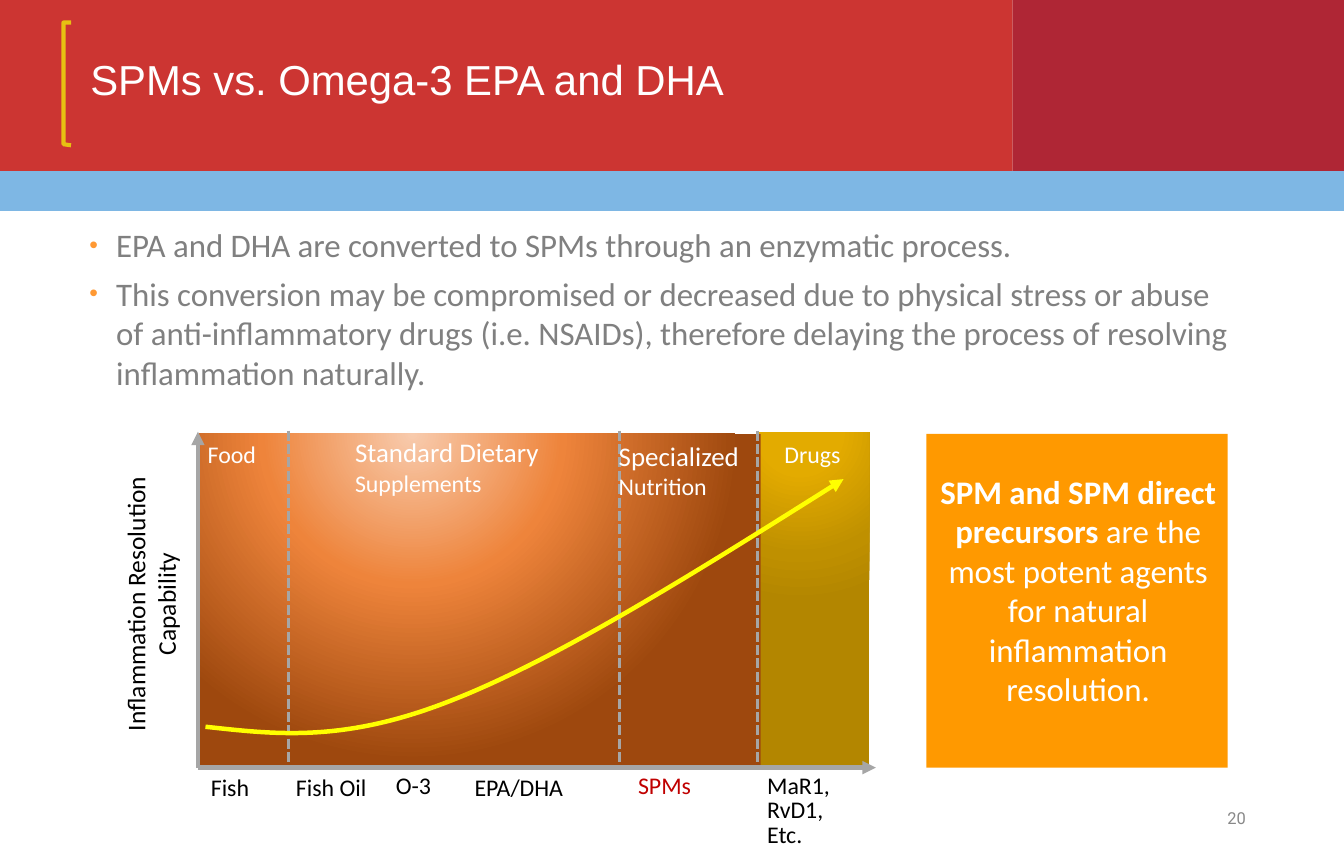
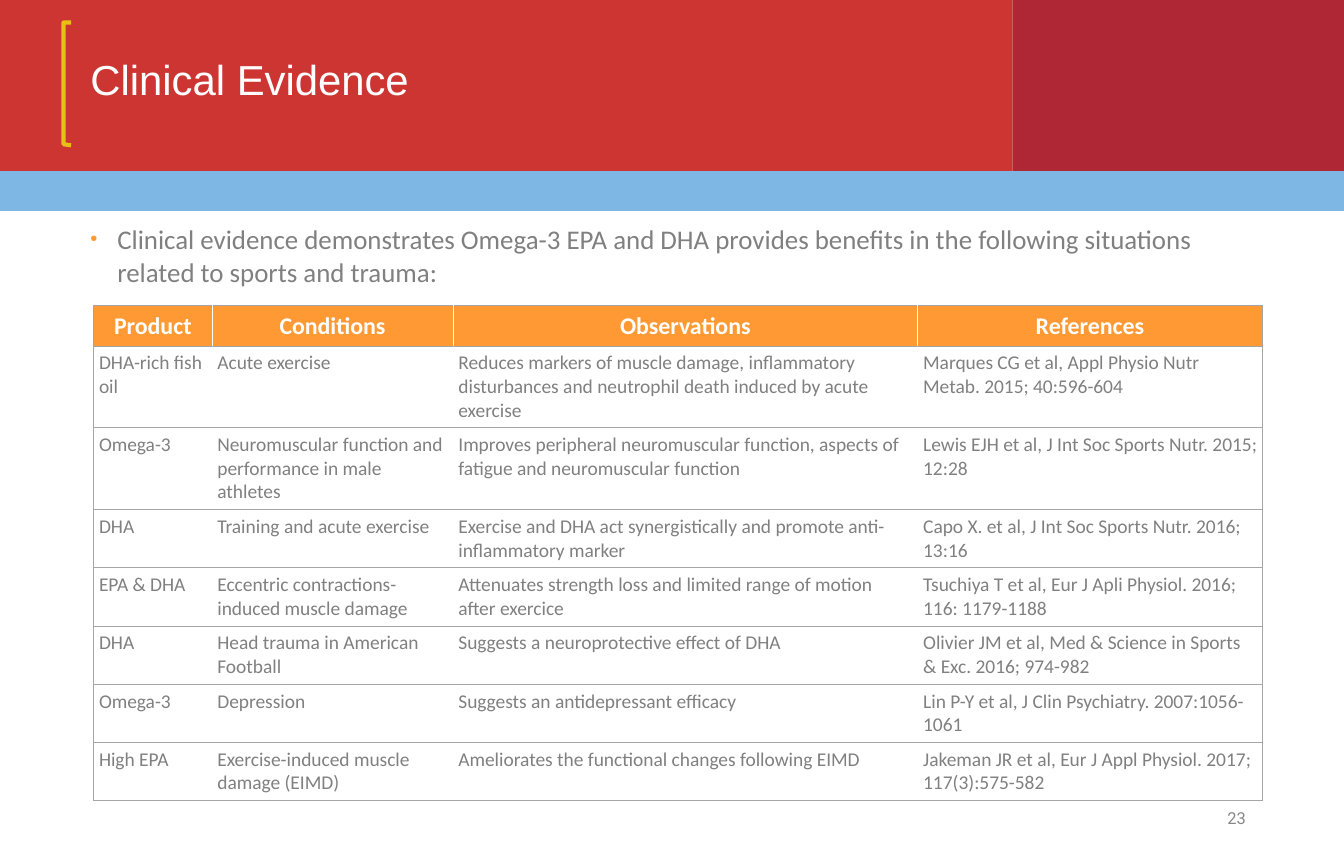
"""Builds two slides on SPMs, omega-3 and the clinical evidence."""
from lxml import etree
from pptx import Presentation
from pptx import util as u
from pptx.dml.color import RGBColor
from pptx.enum import dml, shapes, text as t
from pptx.oxml.ns import qn

SCALE = 9144
INSET = 5
RED, CRIMSON, SKY, GOLD = "CC3532", "AF2635", "7EB7E4", "E7C112"
ORANGE, AMBER, BODY, AXIS = "FF9933", "FF9900", "808080", "A6A6A6"
WHITE, BLACK, YELLOW, BORDER = "FFFFFF", "000000", "FFFF00", "A5A5A5"
CENTER, RIGHT, MIDDLE = t.PP_ALIGN.CENTER, t.PP_ALIGN.RIGHT, t.MSO_ANCHOR.MIDDLE


def px(*lengths):
    return [u.Emu(length * SCALE) for length in lengths]


def rgb(value):
    return RGBColor.from_string(value)


def child(parent, tag, **attributes):
    node = etree.SubElement(parent, qn("a:" + tag))
    for key, value in attributes.items():
        node.set(key, str(value))
    return node


def inset(holder, anchor=t.MSO_ANCHOR.TOP):
    holder.margin_left = holder.margin_right = px(INSET)[0]
    holder.margin_top = holder.margin_bottom = px(INSET)[0]
    holder.vertical_anchor = anchor


def write(frame, text, size=16, color=BLACK, font="Calibri", bold=False,
          align=t.PP_ALIGN.LEFT, before=0, spacing=1.0, bullet=False, lead=None):
    frame.clear()
    for index, words in enumerate(text.split("\n")):
        paragraph = frame.add_paragraph() if index else frame.paragraphs[0]
        paragraph.alignment = align
        paragraph.space_before = u.Pt(before)
        paragraph.line_spacing = spacing
        if bullet:
            properties = paragraph._p.get_or_add_pPr()
            properties.set("marL", str(25 * SCALE))
            properties.set("indent", str(-25 * SCALE))
            child(child(properties, "buClr"), "srgbClr", val=ORANGE)
            child(properties, "buSzPct", val=75000)
            child(properties, "buFont", typeface="Arial")
            child(properties, "buChar", char="•")
        runs = [(words, size, bold)]
        if lead:
            runs.insert(0, lead)
        for content, points, weight in runs:
            run = paragraph.add_run()
            run.text = content
            run.font.name = font
            run.font.size = u.Pt(points)
            run.font.bold = weight
            run.font.color.rgb = rgb(color)


def stroke(shape, color, width, dash=None, arrow=False):
    shape.line.color.rgb = rgb(color)
    shape.line.width = u.Pt(width)
    if dash:
        shape.line.dash_style = dash
    if arrow:
        child(shape._element.spPr.find(qn("a:ln")), "tailEnd", type="triangle")


def border(cell, side, color):
    line = child(cell._tc.get_or_add_tcPr(), "ln" + side, w=6350)
    if color:
        child(child(line, "solidFill"), "srgbClr", val=color)
    else:
        child(line, "noFill")


class Deck:
    """Holds the presentation, its style and the current slide."""

    def __init__(self, width, height):
        self.show = Presentation()
        self.show.slide_width, self.show.slide_height = px(width, height)

    def start(self, title, number):
        self.slide = self.show.slides.add_slide(self.show.slide_layouts[1])
        self.rect(0, -3, 941, 163, RED)
        self.rect(941, -3, 308, 163, CRIMSON)
        self.rect(0, 159, 1249, 37, SKY)
        self.outline([(66, 135), (59, 134), (59, 21), (66, 21)], GOLD, 2.75)
        self.placeholder(0, (79, 47, 863, 53), title, MIDDLE,
                         size=28, color=WHITE, font="Arial")
        self.label(1136, 746, 27, 27, str(number), MIDDLE, wrap=False,
                   size=11, color="888888", font="Roboto", align=RIGHT)

    def bullets(self, box, text, size):
        self.placeholder(1, box, text, size=size, color=BODY, before=6, bullet=True)

    def placeholder(self, key, box, text, anchor=t.MSO_ANCHOR.TOP, **style):
        holder = self.slide.placeholders[key]
        holder.left, holder.top, holder.width, holder.height = px(*box)
        self.slide.shapes._spTree.append(holder._element)
        self.fit(holder.text_frame, text, anchor, True, style)

    def label(self, x, y, w, h, text, anchor=t.MSO_ANCHOR.TOP, wrap=True,
              turn=0, **style):
        box = self.slide.shapes.add_textbox(*px(x, y, w, h))
        box.rotation = turn
        self.fit(box.text_frame, text, anchor, wrap, style)

    def fit(self, frame, text, anchor, wrap, style):
        frame.word_wrap = wrap
        frame.auto_size = t.MSO_AUTO_SIZE.NONE
        inset(frame, anchor)
        write(frame, text, **style)

    def rect(self, x, y, w, h, color):
        shape = self.slide.shapes.add_shape(shapes.MSO_SHAPE.RECTANGLE, *px(x, y, w, h))
        shape.shadow.inherit = False
        shape.line.fill.background()
        shape.fill.solid()
        shape.fill.fore_color.rgb = rgb(color)
        return shape

    def glow(self, x, y, w, h, stops):
        shape = self.rect(x, y, w, h, stops[0][1])
        solid = shape._element.spPr.find(qn("a:solidFill"))
        gradient = etree.Element(qn("a:gradFill"), rotWithShape="1")
        colors = child(gradient, "gsLst")
        for position, color in stops:
            child(child(colors, "gs", pos=position * 1000), "srgbClr", val=color)
        circle = child(gradient, "path", path="circle")
        child(circle, "fillToRect", l=38000, t=-20000, r=62000, b=120000)
        solid.getparent().replace(solid, gradient)

    def line(self, x1, y1, x2, y2, width, **style):
        connector = self.slide.shapes.add_connector(
            shapes.MSO_CONNECTOR.STRAIGHT, *px(x1, y1, x2, y2))
        stroke(connector, AXIS, width, **style)
        child(connector._element.spPr, "effectLst")

    def outline(self, points, color, width, curved=False, **style):
        builder = self.slide.shapes.build_freeform(*points[0], scale=SCALE)
        builder.add_line_segments(points[1:], close=False)
        shape = builder.convert_to_shape()
        shape.shadow.inherit = False
        shape.fill.background()
        stroke(shape, color, width, **style)
        if curved:
            segments = list(shape._element.iter(qn("a:lnTo")))
            for first in range(0, len(segments), 3):
                curve = child(segments[first].getparent(), "cubicBezTo")
                for segment in segments[first:first + 3]:
                    curve.append(segment[0])
                    segment.getparent().remove(segment)

    def table(self, x, y, widths, heights, rows):
        grid = self.slide.shapes.add_table(
            len(rows), len(widths), *px(x, y, sum(widths), sum(heights))).table
        for column, width in zip(grid.columns, px(*widths)):
            column.width = width
        for row, height in zip(grid.rows, px(*heights)):
            row.height = height
        last = len(widths) - 1
        for r, row in enumerate(rows):
            for c, words in enumerate(row):
                cell = grid.cell(r, c)
                inner = None if r else WHITE
                border(cell, "L", inner if c else BORDER)
                border(cell, "R", inner if c < last else BORDER)
                border(cell, "T", BORDER)
                border(cell, "B", BORDER)
                if r:
                    cell.fill.background()
                    inset(cell)
                    write(cell.text_frame, words, size=13, color=BODY)
                else:
                    cell.fill.solid()
                    cell.fill.fore_color.rgb = rgb(ORANGE)
                    inset(cell, MIDDLE)
                    write(cell.text_frame, words, color=WHITE, bold=True, align=CENTER)


def comparison(deck):
    deck.start("SPMs vs. Omega-3 EPA and DHA", 20)
    deck.bullets((78, 204, 1074, 163),
                 "EPA and DHA are converted to SPMs through an enzymatic process.\n"
                 "This conversion may be compromised or decreased due to physical stress "
                 "or abuse of anti-inflammatory drugs (i.e. NSAIDs), therefore delaying "
                 "the process of resolving inflammation naturally.", 22)
    deck.rect(861, 403, 280, 310, AMBER)
    deck.label(864, 433, 276, 263,
               "are the most potent agents for natural inflammation resolution.",
               size=22, color=WHITE, align=CENTER, before=6,
               lead=("SPM and SPM direct precursors ", 22, True))

    deck.glow(704, 402, 104, 310,
              [(0, "E3AB00"), (23, "E3AB00"), (69, "BF9000"), (97, "B38600")])
    deck.glow(185, 403, 522, 311, [(0, "F8CBAD"), (46, "EE843B"), (100, "9E480E")])
    deck.line(184, 713, 814, 713, 3, arrow=True)
    deck.line(184, 713, 184, 401, 3, arrow=True)
    for divider in (268, 576, 704):
        deck.line(divider, 400, divider, 714, 2.25, dash=dml.MSO_LINE.SQUARE_DOT)

    deck.label(4, 528, 271, 66, "Inflammation Resolution Capability",
               turn=270, size=17, align=CENTER)
    for x, y, width, agent, color in (
            (191, 713, 77, "Fish", BLACK), (270, 713, 89, "Fish Oil", BLACK),
            (363, 711, 77, "O-3", BLACK), (436, 713, 132, "EPA/DHA", BLACK),
            (588, 711, 110, "SPMs", "C00000")):
        deck.label(x, y, width, 36, agent, color=color)
    deck.label(708, 715, 124, 81, "MaR1, RvD1,\nEtc.", spacing=0.85)
    for x, y, width, height, lead, zone in (
            (188, 403, 76, 36, None, "Food"),
            (325, 400, 230, 66, ("Standard Dietary ", 18, False), "Supplements"),
            (570, 403, 149, 66, ("Specialized ", 18, False), "Nutrition"),
            (724, 403, 88, 36, None, "Drugs")):
        deck.label(x, y, width, height, zone, color=WHITE, lead=lead)
    deck.outline([(191, 675), (255, 682), (318, 690), (416, 652),
                  (515, 614), (649, 530), (784, 445)],
                 YELLOW, 3, curved=True, arrow=True)


def evidence(deck):
    deck.start("Clinical Evidence", 23)
    deck.bullets((79, 202, 1049, 68),
                 "Clinical evidence demonstrates Omega-3 EPA and DHA provides benefits in "
                 "the following situations related to sports and trauma:", 18)
    deck.table(87, 284, [110, 224, 432, 320], [37, 55] + [47] * 6, [
        ("Product", "Conditions", "Observations", "References"),
        ("DHA-rich fish oil", "Acute exercise",
         "Reduces markers of muscle damage, inflammatory disturbances and neutrophil "
         "death induced by acute exercise",
         "Marques CG et al, Appl Physio Nutr Metab. 2015; 40:596-604"),
        ("Omega-3", "Neuromuscular function and performance in male athletes",
         "Improves peripheral neuromuscular function, aspects of fatigue and "
         "neuromuscular function",
         "Lewis EJH et al, J Int Soc Sports Nutr. 2015; 12:28"),
        ("DHA", "Training and acute exercise",
         "Exercise and DHA act synergistically and promote anti-inflammatory marker",
         "Capo X. et al, J Int Soc Sports Nutr. 2016; 13:16"),
        ("EPA & DHA", "Eccentric contractions-induced muscle damage",
         "Attenuates strength loss and limited range of motion after exercice",
         "Tsuchiya T et al, Eur J Apli Physiol. 2016; 116: 1179-1188"),
        ("DHA", "Head trauma in American Football",
         "Suggests a neuroprotective effect of DHA",
         "Olivier JM et al, Med & Science in Sports & Exc. 2016; 974-982"),
        ("Omega-3", "Depression", "Suggests an antidepressant efficacy",
         "Lin P-Y et al, J Clin Psychiatry. 2007:1056-1061"),
        ("High EPA", "Exercise-induced muscle damage (EIMD)",
         "Ameliorates the functional changes following EIMD",
         "Jakeman JR et al, Eur J Appl Physiol. 2017; 117(3):575-582"),
    ])


def main():
    deck = Deck(1249, 796)
    comparison(deck)
    evidence(deck)
    deck.show.save("out.pptx")


if __name__ == "__main__":
    main()
